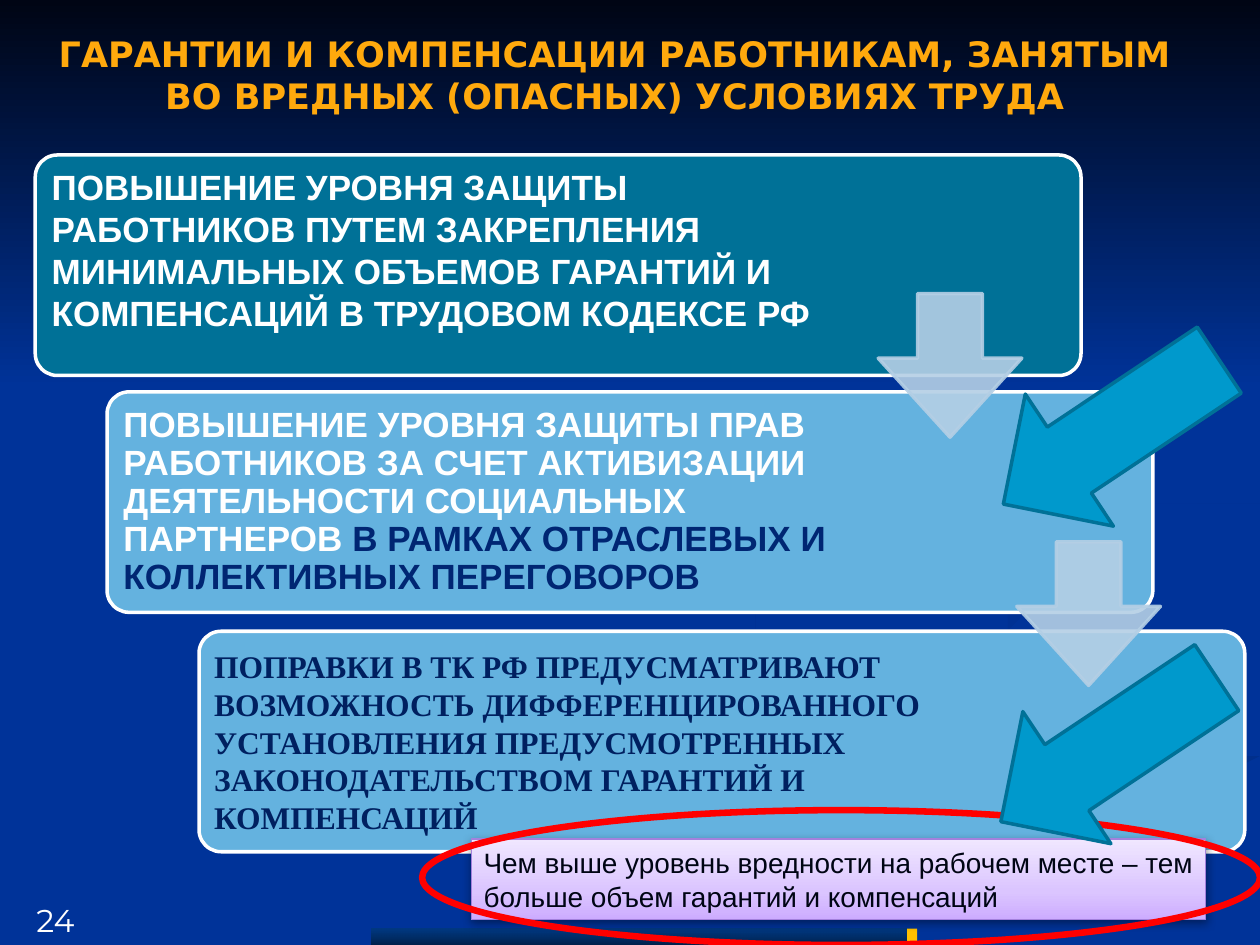
from lxml import etree
from pptx import Presentation
from pptx.dml.color import RGBColor
from pptx.enum import shapes, text
from pptx.oxml import ns
from pptx.util import Inches, Pt

SHAPE = shapes.MSO_SHAPE
ANCHOR = text.MSO_ANCHOR
ALIGN = text.PP_ALIGN

WAVES = [
    (("003399", "003193"), 0,
     [(7.81, 5.53), (7.31, 5.33), (6.42, 5.07), (5.94, 4.85), (5.75, 4.59), (5.7, 4.72),
      (5.93, 4.91), (6.54, 5.13), (7.41, 5.39), (7.81, 5.56), (7.85, 5.7), (7.59, 5.9),
      (6.99, 6.09), (5.79, 6.39), (4.58, 6.74), (3.76, 7.07), (3, 7.49), (3.61, 7.49),
      (4.66, 7), (5.64, 6.65), (6.76, 6.34), (7.69, 6.09), (8, 5.81)]),
    (("002F8C", "003399"), 90,
     [(5.03, 7.49), (5.71, 7.49), (6.3, 7.19), (7.22, 6.82), (8.21, 6.51), (9.98, 6.09),
      (9.98, 5.81), (9.36, 6.02), (7.97, 6.38), (6.96, 6.69), (5.99, 7.06), (5.19, 7.47)]),
    (("003091", "003399"), 45,
     [(7.81, 4.6), (7.86, 4.74), (8.26, 4.96), (8.05, 4.76), (8.16, 4.59), (8.59, 4.43),
      (9.36, 4.29), (9.98, 4.2), (9.98, 4.02), (9.33, 4.15), (8.49, 4.27), (7.99, 4.42)]),
    (("002F8E", "003399"), 45,
     [(6.83, 4.3), (7.86, 4.12), (8.55, 3.91), (8.89, 3.62), (8.9, 3.24), (8.54, 2.83),
      (7.99, 2.5), (7.62, 2.33), (8.26, 2.66), (8.76, 3.06), (8.89, 3.35), (8.7, 3.65),
      (8.18, 3.86), (7.04, 4.09), (6.15, 4.29), (5.8, 4.51), (5.84, 4.79), (6.22, 5),
      (5.94, 4.75), (6.06, 4.52), (6.49, 4.36)]),
]


def color(value):
    """Turn a hex string into a colour."""
    return RGBColor.from_string(value)


def add_alpha(srgb, percent):
    """Set the opacity of an srgbClr element."""
    etree.SubElement(srgb, ns.qn("a:alpha")).set("val", str(percent * 1000))


def paint_gradient(shape, stops, angle):
    """Fill with (position, colour, opacity) stops at a clockwise angle."""
    shape.fill.gradient()
    shape.fill.gradient_angle = (360 - angle) % 360
    stop_list = shape._element.spPr.find(".//" + ns.qn("a:gsLst"))
    for old in list(stop_list):
        stop_list.remove(old)
    for position, value, opacity in stops:
        stop = etree.SubElement(stop_list, ns.qn("a:gs"), pos=str(position * 1000))
        add_alpha(etree.SubElement(stop, ns.qn("a:srgbClr"), val=value), opacity)


def paint(shape, fill=None, line=None, width=2, opacity=100):
    """Set solid fill and outline, or leave either out."""
    shape.shadow.inherit = False
    if fill:
        shape.fill.solid()
        shape.fill.fore_color.rgb = color(fill)
    else:
        shape.fill.background()
    if line:
        shape.line.color.rgb = color(line)
        shape.line.width = Pt(width)
    else:
        shape.line.fill.background()
    if opacity < 100:
        for srgb in shape._element.spPr.iter(ns.qn("a:srgbClr")):
            add_alpha(srgb, opacity)


def add_figure(slide, kind, box, adjustments=(), **style):
    """Add a preset shape in a left, top, width, height box."""
    shape = slide.shapes.add_shape(kind, *map(Inches, box))
    for index, value in enumerate(adjustments):
        shape.adjustments[index] = value
    paint(shape, **style)
    return shape


def add_wave(slide, colors, angle, points):
    """Add one closed background wave."""
    builder = slide.shapes.build_freeform(*points[0], scale=Inches(1))
    builder.add_line_segments(points[1:], close=True)
    shape = builder.convert_to_shape()
    paint(shape)
    paint_gradient(shape, [(0, colors[0], 100), (100, colors[1], 100)], angle)


def write(shape, runs, size, font, bold=False, align=ALIGN.LEFT,
          anchor=ANCHOR.MIDDLE, spacing=None):
    """Write (text, colour) runs as one wrapped paragraph."""
    frame = shape.text_frame
    frame.word_wrap = True
    frame.vertical_anchor = anchor
    paragraph = frame.paragraphs[0]
    paragraph.alignment = align
    if spacing:
        paragraph.line_spacing = spacing
    for words, value in runs:
        run = paragraph.add_run()
        run.text = words
        run.font.size = Pt(size)
        run.font.name = font
        run.font.bold = bold
        run.font.color.rgb = color(value)


def add_words(slide, box, runs, size, font, margins=None, **style):
    """Add a text box with optional left, top, right, bottom margins."""
    shape = slide.shapes.add_textbox(*map(Inches, box))
    if margins:
        frame = shape.text_frame
        (frame.margin_left, frame.margin_top,
         frame.margin_right, frame.margin_bottom) = map(Inches, margins)
    write(shape, runs, size, font, **style)


def add_panel(slide, left, top, fill, text_width, runs, size, font, margins, **style):
    """Add a rounded step panel with its text."""
    add_figure(slide, SHAPE.ROUNDED_RECTANGLE, (left, top, 8.3, 1.75), [0.1],
               fill=fill, line="FFFFFF")
    add_words(slide, (left + 0.05, top + 0.05, text_width, 1.65), runs, size, font,
              margins, bold=True, **style)


def add_title(slide):
    """Place and format the slide title."""
    title = slide.shapes.title
    title.left, title.top, title.width, title.height = map(Inches, (0.35, 0.21, 9.06, 0.77))
    title.text_frame.auto_size = text.MSO_AUTO_SIZE.NONE
    write(title, [("ГАРАНТИИ И КОМПЕНСАЦИИ РАБОТНИКАМ, ЗАНЯТЫМ ВО ВРЕДНЫХ (ОПАСНЫХ) "
                   "УСЛОВИЯХ ТРУДА", "FFA90D")],
          20, "DejaVu Sans", bold=True, align=ALIGN.CENTER)


def add_backdrop(slide):
    """Paint the background, waves, top shade and bottom bar."""
    slide.background.fill.solid()
    slide.background.fill.fore_color.rgb = color("003399")
    for colors, angle, points in WAVES:
        add_wave(slide, colors, angle, points)
    shade = add_figure(slide, SHAPE.RECTANGLE, (0, 0, 10, 3.08))
    paint_gradient(shade, [(0, "000514", 100), (100, "003399", 100)], 90)
    bar = add_figure(slide, SHAPE.RECTANGLE, (2.95, 7.37, 4.3, 0.13))
    paint_gradient(bar, [(0, "003C73", 60), (100, "001C35", 80)], 90)
    add_figure(slide, SHAPE.RECTANGLE, (7.2, 7.37, 0.08, 0.13), fill="FFC000")
    tree = slide.shapes._spTree
    tree.append(slide.shapes.title._element)


def add_note(slide):
    """Add the shaded conclusion box."""
    note = add_figure(slide, SHAPE.RECTANGLE, (3.74, 6.66, 5.83, 0.64),
                      line="A481DD", width=0.75)
    paint_gradient(note, [(0, "CDACFF", 100), (35, "DBC5FF", 100), (100, "F0E7FF", 100)], 270)
    effects = note._element.spPr.find(ns.qn("a:effectLst"))
    shadow = etree.SubElement(effects, ns.qn("a:outerShdw"), blurRad=str(Pt(5)),
                              dist=str(Pt(1.6)), dir="5400000", rotWithShape="0")
    add_alpha(etree.SubElement(shadow, ns.qn("a:srgbClr"), val="000000"), 38)
    write(note, [("Чем выше уровень вредности на рабочем месте – тем больше объем "
                  "гарантий и компенсаций", "000514")], 16, "Arial")


def main():
    """Build and save the slide."""
    presentation = Presentation()
    presentation.slide_width, presentation.slide_height = Inches(10), Inches(7.5)
    slide = presentation.slides.add_slide(presentation.slide_layouts[5])
    add_backdrop(slide)
    add_title(slide)
    add_panel(slide, 0.28, 1.23, "007197", 6.41,
              [("ПОВЫШЕНИЕ УРОВНЯ ЗАЩИТЫ РАБОТНИКОВ ПУТЕМ ЗАКРЕПЛЕНИЯ МИНИМАЛЬНЫХ ОБЪЕМОВ "
                "ГАРАНТИЙ И КОМПЕНСАЦИЙ В ТРУДОВОМ КОДЕКСЕ РФ", "FFFFFF")],
              20, "Arial", (0.08, 0.03, 0.08, 0.08), anchor=ANCHOR.TOP)
    add_panel(slide, 0.85, 3.11, "64B2DF", 6.33,
              [("ПОВЫШЕНИЕ УРОВНЯ ЗАЩИТЫ ПРАВ РАБОТНИКОВ ЗА СЧЕТ АКТИВИЗАЦИИ ДЕЯТЕЛЬНОСТИ "
                "СОЦИАЛЬНЫХ ПАРТНЕРОВ ", "FFFFFF"),
               ("В РАМКАХ ОТРАСЛЕВЫХ И КОЛЛЕКТИВНЫХ ПЕРЕГОВОРОВ", "002673")],
              20, "Arial", (0.08,) * 4, spacing=0.9)
    add_panel(slide, 1.58, 5.01, "64B2DF", 6.33,
              [("ПОПРАВКИ В ТК РФ ПРЕДУСМАТРИВАЮТ ВОЗМОЖНОСТЬ ДИФФЕРЕНЦИРОВАННОГО УСТАНОВЛЕНИЯ "
                "ПРЕДУСМОТРЕННЫХ ЗАКОНОДАТЕЛЬСТВОМ ГАРАНТИЙ И КОМПЕНСАЦИЙ", "002060")],
              18, "Times New Roman", (0.07,) * 4)
    for left, top in ((6.97, 2.33), (8.07, 4.3)):
        add_figure(slide, SHAPE.DOWN_ARROW, (left, top, 1.14, 1.14), [0.45, 0.55],
                   fill="B4CFE5", line="B4CFE5", opacity=90)
    add_note(slide)
    add_figure(slide, SHAPE.OVAL, (3.35, 6.43, 6.65, 1.07), line="FF0000", width=3.75)
    for left, top in ((8.19, 2.4), (8.17, 4.92)):
        arrow = add_figure(slide, SHAPE.DOWN_ARROW, (left, top, 1.26, 2.06),
                           fill="0099CC", line="007197")
        arrow.rotation = 56.3
    add_words(slide, (0, 6.98, 0.88, 0.52), [("24", "FFFFFF")], 18, "Montserrat",
              align=ALIGN.CENTER, anchor=ANCHOR.BOTTOM)
    presentation.save("out.pptx")


if __name__ == "__main__":
    main()
